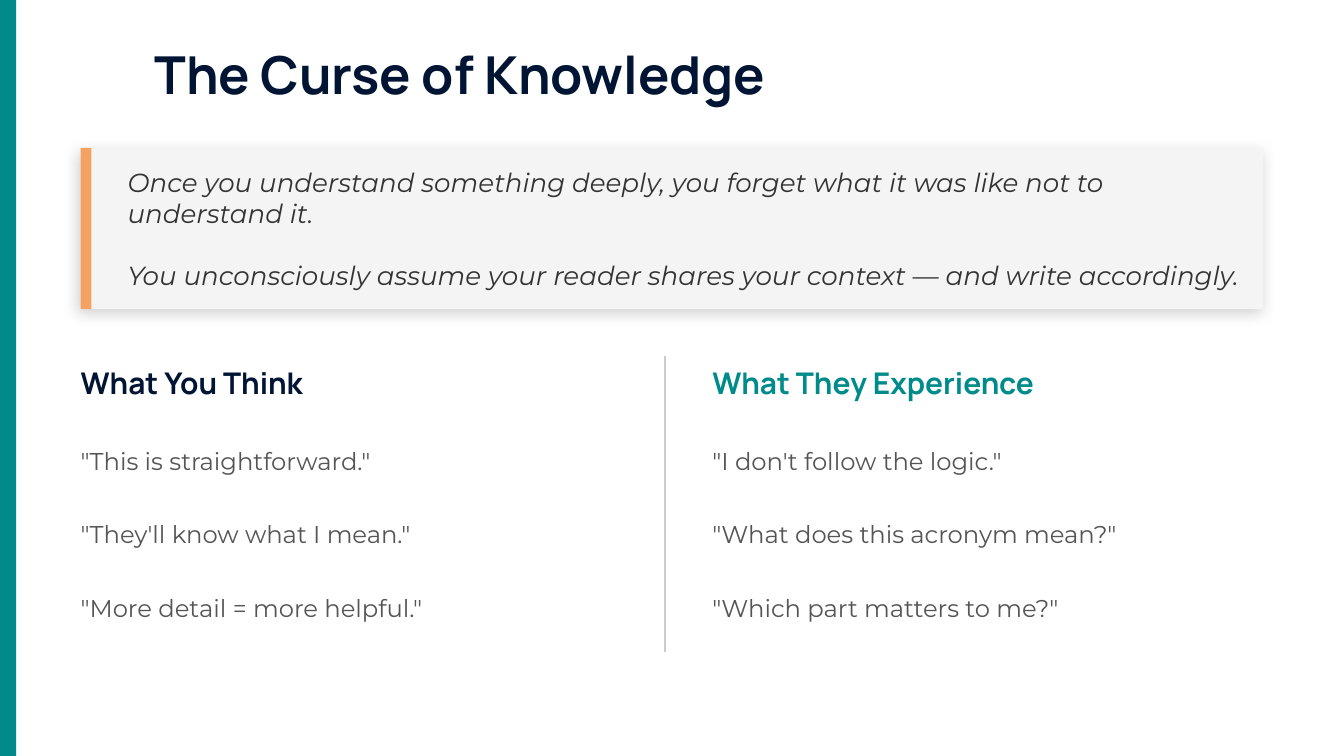
from dataclasses import dataclass

from lxml import etree
from pptx import Presentation
from pptx.dml.color import RGBColor
from pptx.enum.shapes import MSO_CONNECTOR, MSO_SHAPE
from pptx.enum.text import MSO_ANCHOR, MSO_AUTO_SIZE, PP_ALIGN
from pptx.oxml.ns import qn
from pptx.util import Inches, Pt

RECT = MSO_SHAPE.RECTANGLE
LINE = MSO_CONNECTOR.STRAIGHT
MIDDLE = MSO_ANCHOR.MIDDLE
LEFT = PP_ALIGN.LEFT
FIXED = MSO_AUTO_SIZE.NONE

COMPARE = 4              # template layout: title, two headings, two lists
CELL = 0.1               # grid cell in inches
COLS, ROWS = 100, 56.25
EDGE, WIDE, GAP = 6, 41, 6

Box = tuple[float, float, float, float]


@dataclass(frozen=True)
class Style:
    face: str
    size: int
    color: str
    bold: bool = False
    italic: bool = False
    gap: float = 0       # points between paragraphs


@dataclass(frozen=True)
class Theme:
    navy: str = "001434"
    teal: str = "008B8B"
    amber: str = "F4A261"
    panel: str = "F4F4F4"
    rule: str = "CCCCCC"
    shade: str = "000000"
    title: Style = Style("Manrope", 28, navy, bold=True)
    quote: Style = Style("Montserrat", 14, "333333", italic=True, gap=16.25)
    think: Style = Style("Manrope", 16, navy, bold=True)
    feel: Style = Style("Manrope", 16, teal, bold=True)
    item: Style = Style("Montserrat", 13, "555555", gap=23.75)


@dataclass(frozen=True)
class Column:
    head: str
    style: Style
    items: list[str]


THEME = Theme()
TITLE = "The Curse of Knowledge"
QUOTE = [
    "Once you understand something deeply, you forget what it was like "
    "not to understand it.",
    "You unconsciously assume your reader shares your context — "
    "and write accordingly.",
]
COLUMNS = [
    Column("What You Think", THEME.think, [
        '"This is straightforward."',
        '"They\'ll know what I mean."',
        '"More detail = more helpful."',
    ]),
    Column("What They Experience", THEME.feel, [
        '"I don\'t follow the logic."',
        '"What does this acronym mean?"',
        '"Which part matters to me?"',
    ]),
]


def grid(*cells: float) -> list[int]:
    return [Inches(cell * CELL) for cell in cells]


def assign(target, values: dict) -> None:
    for name, value in values.items():
        setattr(target, name, value)


def write(shape, box: Box, lines: list[str], style: Style) -> None:
    """Place a text shape on the grid and fill it with plain paragraphs."""
    assign(shape, dict(zip(("left", "top", "width", "height"), grid(*box))))
    frame = shape.text_frame
    assign(frame, {
        "text": "\n".join(lines), "word_wrap": True, "auto_size": FIXED,
        "vertical_anchor": MIDDLE, "margin_left": 0, "margin_right": 0,
        "margin_top": 0, "margin_bottom": 0,
    })
    for row, para in enumerate(frame.paragraphs):
        props = para._p.get_or_add_pPr()
        props.set("marL", "0")
        props.set("indent", "0")
        etree.SubElement(props, qn("a:buNone"))
        assign(para, {
            "alignment": LEFT, "line_spacing": 1.0, "space_after": Pt(0),
            "space_before": Pt(style.gap if row else 0),
        })
        font = para.runs[0].font
        assign(font, {
            "name": style.face, "size": Pt(style.size),
            "bold": style.bold, "italic": style.italic,
        })
        font.color.rgb = RGBColor.from_string(style.color)


def block(slide, box: Box, color: str):
    shape = slide.shapes.add_shape(RECT, *grid(*box))
    shape.shadow.inherit = False
    shape.fill.solid()
    shape.fill.fore_color.rgb = RGBColor.from_string(color)
    shape.line.fill.background()
    return shape


def shade(shape) -> None:
    """Add a soft outer shadow."""
    effects = shape._element.spPr.find(qn("a:effectLst"))
    outer = etree.SubElement(effects, qn("a:outerShdw"), {
        "blurRad": str(Pt(8)), "dist": str(Pt(3)),
        "dir": str(135 * 60000), "algn": "bl", "rotWithShape": "0",
    })
    color = etree.SubElement(outer, qn("a:srgbClr"), val=THEME.shade)
    etree.SubElement(color, qn("a:alpha"), val="18000")


def divide(slide, x: float, top: float, end: float) -> None:
    """Draw the vertical rule between the columns."""
    line = slide.shapes.add_connector(LINE, *grid(x, top, x, end))
    line.line.color.rgb = RGBColor.from_string(THEME.rule)
    line.line.width = Pt(1)
    etree.SubElement(line._element.spPr, qn("a:effectLst"))


def main() -> None:
    deck = Presentation()
    deck.slide_width, deck.slide_height = grid(COLS, ROWS)
    slide = deck.slides.add_slide(deck.slide_layouts[COMPARE])
    slots = {slot.placeholder_format.idx: slot for slot in slide.placeholders}

    block(slide, (0, 0, 1.2, ROWS), THEME.teal)
    write(slots[0], (11.5, 3, 60, 5), [TITLE], THEME.title)

    top, tall = 11, 12
    shade(block(slide, (EDGE, top, COLS - 2 * EDGE, tall), THEME.panel))
    block(slide, (EDGE, top, 0.8, tall), THEME.amber)
    area = (9.5, top, 83.3, tall)
    write(slide.shapes.add_textbox(*grid(*area)), area, QUOTE, THEME.quote)

    for spot, col in enumerate(COLUMNS):
        x = EDGE + spot * (WIDE + GAP)
        write(slots[2 * spot + 1], (x, 26.5, WIDE, 4), [col.head], col.style)
        write(slots[2 * spot + 2], (x, 32, WIDE, 15.5), col.items, THEME.item)
    divide(slide, 49.5, 26.5, 48.5)

    deck.save("out.pptx")


if __name__ == "__main__":
    main()
